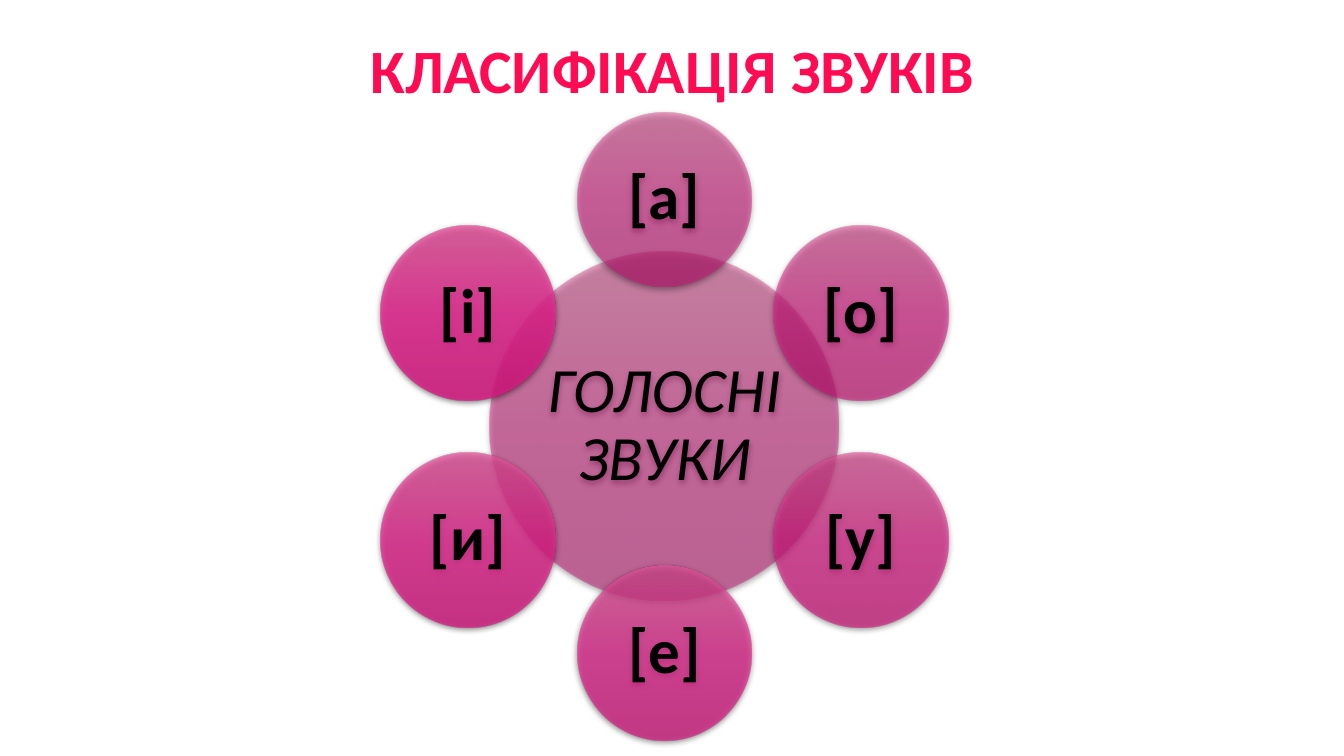
import math
from dataclasses import dataclass

import pptx
import pptx.dml.color
import pptx.enum.shapes
import pptx.enum.text
import pptx.oxml
import pptx.oxml.ns
import pptx.util

Inches = pptx.util.Inches


@dataclass(frozen=True)
class Theme:
    font: str = "Calibri"
    title: str = "FF0B53"
    ink: str = "000000"
    head_size: int = 44
    text_size: int = 45
    spacing: float = 0.9
    inset: float = 0.06


@dataclass(frozen=True)
class Disc:
    text: str
    x: float
    y: float
    size: float
    stops: tuple[str, str, str]
    alpha: int
    bold: bool = True


THEME = Theme()
MID_X, MID_Y, RADIUS = 6.59, 4.23, 2.25
HUB_SIZE, VOWEL_SIZE = 3.46, 1.73

# Vowels clockwise from the top, with their gradient colours
VOWELS = [
    ("[а]", ("DC5194", "DC1F87", "CB1479")),
    ("[о]", ("DE5296", "E21E8A", "D1127B")),
    ("[у]", ("E15398", "E4208C", "D5137D")),
    ("[е]", ("E3549A", "E7228E", "D7147F")),
    ("[и]", ("E5559C", "E92490", "D91681")),
    ("[і]", ("E7569E", "EB2692", "DB1883")),
]


def style(para, size: int, color: str, bold: bool, italic: bool) -> None:
    para.alignment = pptx.enum.text.PP_ALIGN.CENTER
    para.line_spacing = THEME.spacing
    font = para.font
    font.name = THEME.font
    font.size = pptx.util.Pt(size)
    font.bold, font.italic = bold, italic
    font.color.rgb = pptx.dml.color.RGBColor.from_string(color)


def shade(shape, stops: tuple[str, str, str], alpha: int) -> None:
    """Fill from top to bottom with three translucent colours."""
    shape.fill.gradient()
    shape.fill.gradient_angle = 270
    items = "".join(
        f'<a:gs pos="{i * 50000}"><a:srgbClr val="{color}">'
        f'<a:alpha val="{alpha * 1000}"/></a:srgbClr></a:gs>'
        for i, color in enumerate(stops)
    )
    space = pptx.oxml.ns.nsdecls("a")
    fill = shape.element.spPr.find(pptx.oxml.ns.qn("a:gradFill"))
    old = fill.find(pptx.oxml.ns.qn("a:gsLst"))
    fill.replace(old, pptx.oxml.parse_xml(f"<a:gsLst {space}>{items}</a:gsLst>"))


def cast(shape) -> None:
    """Add a soft shadow below the shape."""
    shape.shadow.inherit = False
    space = pptx.oxml.ns.nsdecls("a")
    blur, drop = pptx.util.Pt(4.5), pptx.util.Pt(1.5)
    effect = shape.element.spPr.find(pptx.oxml.ns.qn("a:effectLst"))
    effect.append(pptx.oxml.parse_xml(
        f'<a:outerShdw {space} blurRad="{blur}" dist="{drop}" dir="5400000" '
        f'algn="ctr" rotWithShape="0"><a:srgbClr val="{THEME.ink}">'
        '<a:alpha val="63000"/></a:srgbClr></a:outerShdw>'
    ))


def draw(slide, disc: Disc) -> None:
    half = disc.size / 2
    shape = slide.shapes.add_shape(
        pptx.enum.shapes.MSO_SHAPE.OVAL,
        Inches(disc.x - half), Inches(disc.y - half),
        Inches(disc.size), Inches(disc.size),
    )
    shade(shape, disc.stops, disc.alpha)
    shape.line.fill.background()
    cast(shape)
    frame = shape.text_frame
    frame.word_wrap = True
    frame.vertical_anchor = pptx.enum.text.MSO_ANCHOR.MIDDLE
    frame.margin_left = frame.margin_right = Inches(THEME.inset)
    frame.margin_top = frame.margin_bottom = Inches(THEME.inset)
    frame.text = disc.text
    style(frame.paragraphs[0], THEME.text_size, THEME.ink, disc.bold, not disc.bold)


def main() -> None:
    deck = pptx.Presentation()
    deck.slide_width, deck.slide_height = Inches(13.33), Inches(7.5)
    slide = deck.slides.add_slide(deck.slide_layouts[5])

    # Title
    title = slide.shapes.title
    title.left, title.top = Inches(0.92), Inches(0)
    title.width, title.height = Inches(11.5), Inches(1.45)
    title.text_frame.text = "КЛАСИФІКАЦІЯ ЗВУКІВ"
    title.text_frame.vertical_anchor = pptx.enum.text.MSO_ANCHOR.MIDDLE
    style(title.text_frame.paragraphs[0], THEME.head_size, THEME.title, True, False)

    # Hub
    draw(slide, Disc("ГОЛОСНІ ЗВУКИ", MID_X, MID_Y, HUB_SIZE,
                     ("D85292", "D62184", "C61676"), 50, bold=False))

    # Ring of vowels, each less translucent than the one before
    for i, (text, stops) in enumerate(VOWELS):
        angle = math.tau * i / len(VOWELS)
        x = MID_X + RADIUS * math.sin(angle)
        y = MID_Y - RADIUS * math.cos(angle)
        draw(slide, Disc(text, x, y, VOWEL_SIZE, stops, 55 + 5 * i))

    deck.save("out.pptx")


if __name__ == "__main__":
    main()
